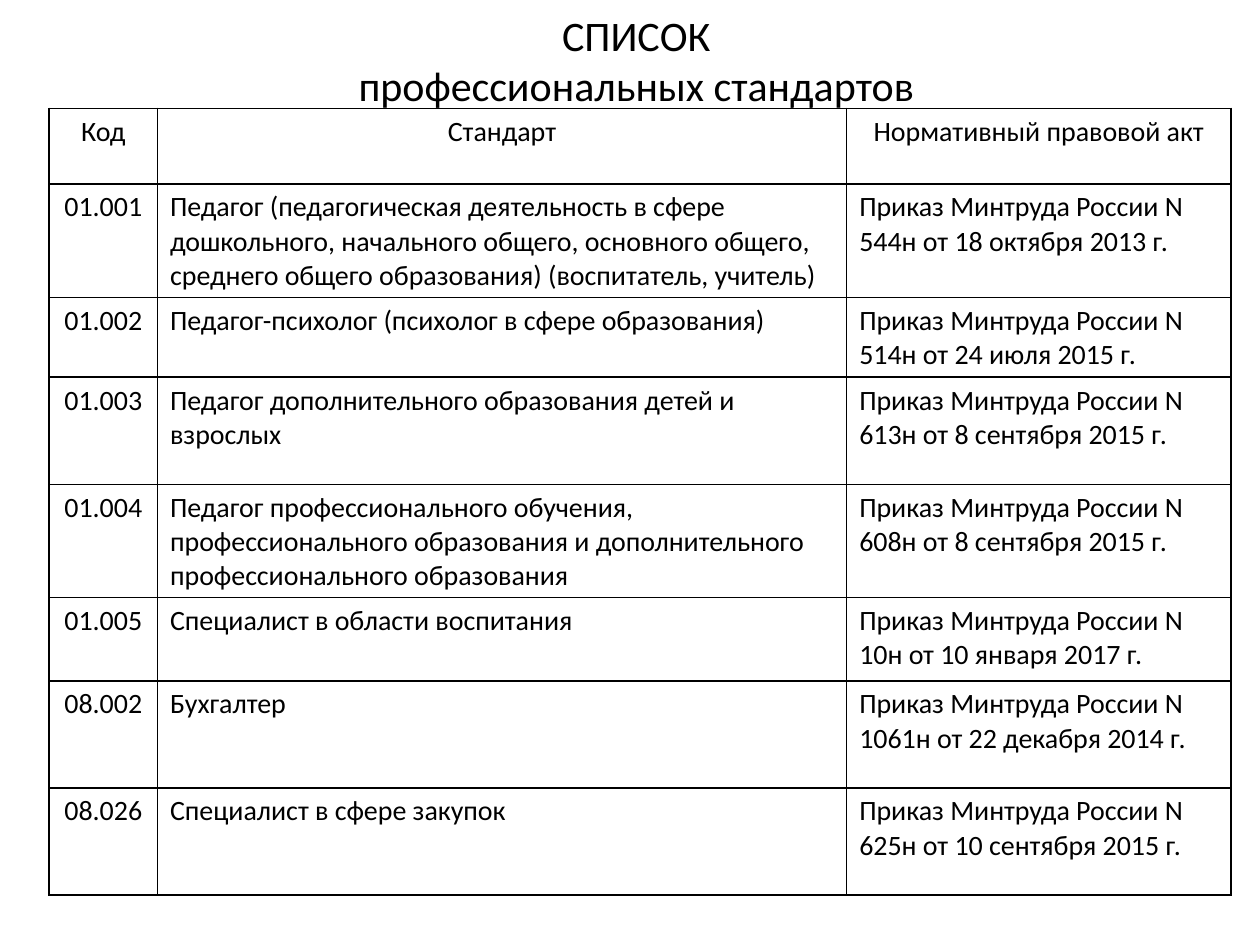
from lxml import etree
from pptx import Presentation
from pptx.dml.color import RGBColor
from pptx.enum import text as t
from pptx.oxml import ns
from pptx.util import Inches, Pt

TITLE = "СПИСОК\vпрофессиональных стандартов"
HEADS = ("Код", "Cтандарт", "Нормативный правовой акт")
ITEMS = [
    ("01.001", "Педагог (педагогическая деятельность в сфере дошкольного, начального общего, "
     "основного общего, среднего общего образования) (воспитатель, учитель)",
     "544н", "18 октября 2013", 0.88),
    ("01.002", "Педагог-психолог (психолог в сфере образования)",
     "514н", "24 июля 2015", 0.62),
    ("01.003", "Педагог дополнительного образования детей и взрослых",
     "613н", "8 сентября 2015", 0.85),
    ("01.004", "Педагог профессионального обучения, профессионального образования "
     "и дополнительного профессионального образования",
     "608н", "8 сентября 2015", 0.88),
    ("01.005", "Специалист в области воспитания",
     "10н", "10 января 2017", 0.66),
    ("08.002", "Бухгалтер", "1061н", "22 декабря 2014", 0.85),
    ("08.026", "Специалист в сфере закупок", "625н", "10 сентября 2015", 0.85),
]
WIDTHS = (0.86, 5.47, 3.05)
HEAD_H = 0.6
BLACK = "000000"


def style(para, size, mid):
    para.font.name = "Calibri"
    para.font.size = Pt(size)
    para.font.color.rgb = RGBColor.from_string(BLACK)
    para.alignment = t.PP_ALIGN.CENTER if mid else t.PP_ALIGN.LEFT


def frame(cell):
    props = cell._tc.get_or_add_tcPr()
    for i, side in enumerate(("lnL", "lnR", "lnT", "lnB")):
        line = etree.Element(ns.qn("a:" + side), w=str(Pt(1)))
        fill = etree.SubElement(line, ns.qn("a:solidFill"))
        etree.SubElement(fill, ns.qn("a:srgbClr"), val=BLACK)
        props.insert(i, line)


def main():
    deck = Presentation()
    deck.slide_width, deck.slide_height = Inches(10), Inches(7.5)
    slide = deck.slides.add_slide(deck.slide_layouts[6])

    box = slide.shapes.add_textbox(Inches(0.55), Inches(0.16), Inches(9), Inches(0.63))
    box.text_frame.word_wrap = True
    box.text_frame.vertical_anchor = t.MSO_ANCHOR.MIDDLE
    box.text_frame.text = TITLE
    style(box.text_frame.paragraphs[0], 24, True)

    rows = [HEADS] + [(code, name, f"Приказ Минтруда России N {num} от {date} г.")
                      for code, name, num, date, _ in ITEMS]
    highs = [HEAD_H] + [item[-1] for item in ITEMS]
    table = slide.shapes.add_table(
        len(rows), len(WIDTHS), Inches(0.39), Inches(0.86),
        Inches(sum(WIDTHS)), Inches(sum(highs))).table
    table.first_row = table.horz_banding = False
    for col, width in zip(table.columns, WIDTHS):
        col.width = Inches(width)
    for r, (row, high) in enumerate(zip(rows, highs)):
        table.rows[r].height = Inches(high)
        for c, words in enumerate(row):
            cell = table.cell(r, c)
            cell.text = words
            cell.fill.background()
            style(cell.text_frame.paragraphs[0], 16, r == 0 or c == 0)
            frame(cell)

    deck.save("out.pptx")


if __name__ == "__main__":
    main()
